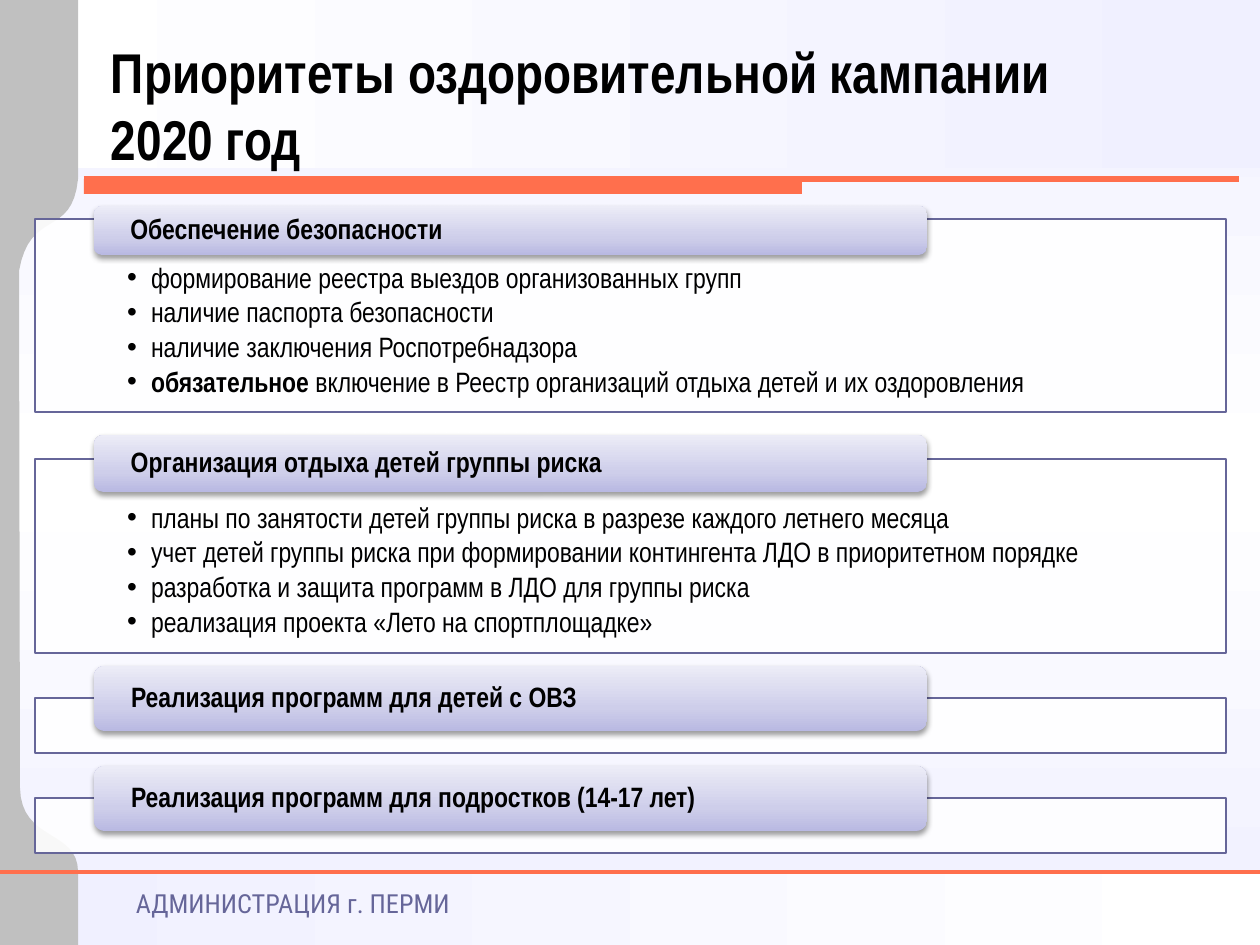
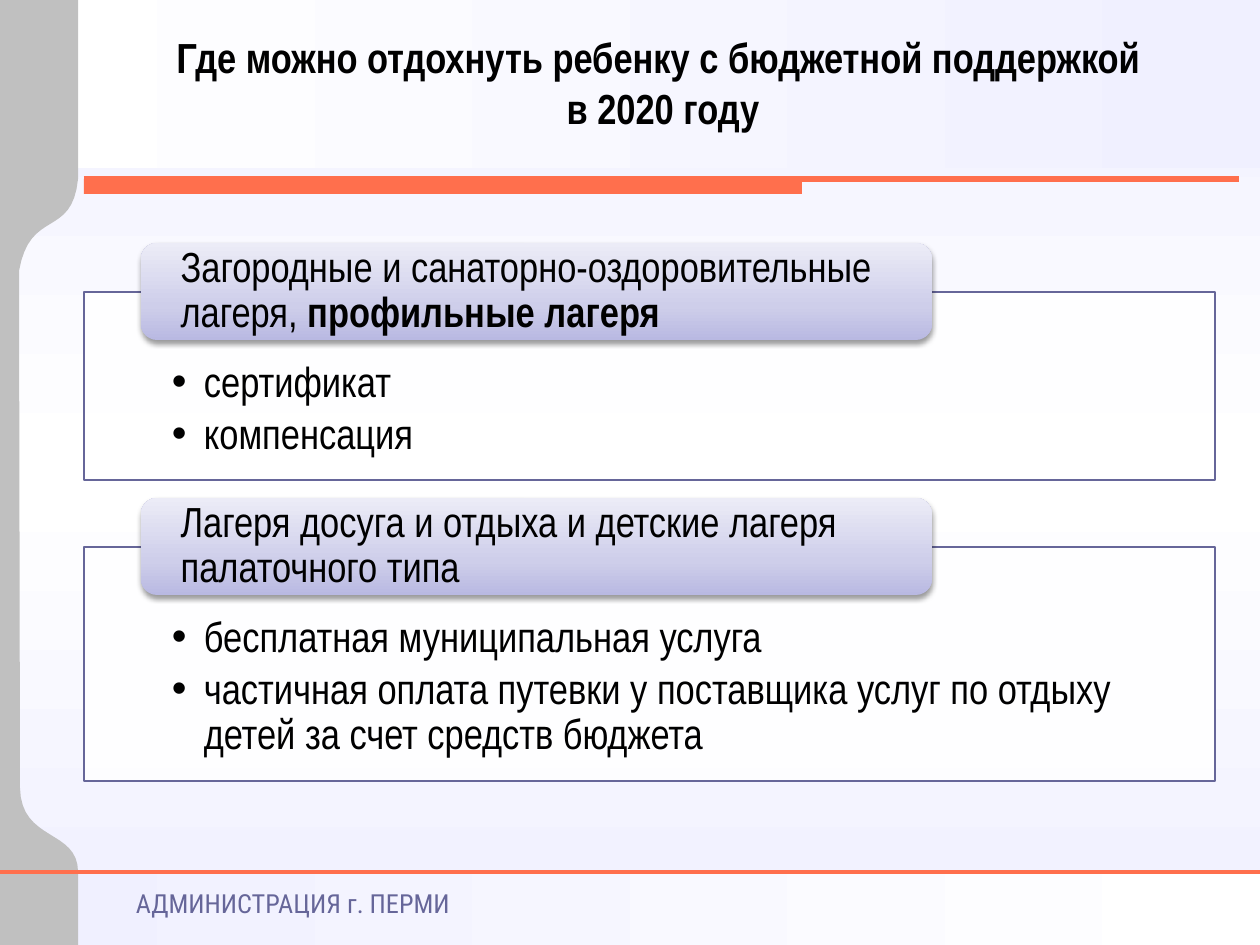
from dataclasses import dataclass

from lxml import etree
from pptx import Presentation
from pptx import util as u
from pptx.dml import color
from pptx.enum import shapes, text
from pptx.oxml import ns

SCALE = 914400 / 126


@dataclass(frozen=True)
class Theme:
    pale: str = "F0F0FF"
    white: str = "FFFFFF"
    grey: str = "C0C0C0"
    orange: str = "FF6F4D"
    slate: str = "666699"
    black: str = "000000"
    bar_stops: tuple = ((0, "B9B9E2"), (35, "CECEEA"), (100, "ECECF7"))
    page_stops: tuple = ((0, "F0F0FF"), (50, "FFFFFF"), (100, "F0F0FF"))
    font: str = "Arial Narrow"
    footer_font: str = "Roboto Condensed"
    footer_size: int = 15
    title_size: int = 32
    subtitle_size: int = 24


@dataclass(frozen=True)
class SectionStyle:
    size: int
    insets: tuple
    hanging: int
    bar_offset: int
    bar_width: int
    bar_inset: int


THEME = Theme()
COMPACT = SectionStyle(16, (92, 45, 92, 15), 24, 59, 833, 34)
LARGE = SectionStyle(24, (88, 69, 88, 24), 32, 57, 791, 35)


def px(value):
    return u.Emu(round(value * SCALE))


def rgb(code):
    return color.RGBColor.from_string(code)


def add_xml(parent, tag, **attributes):
    return etree.SubElement(parent, ns.qn(tag), attributes)


def set_gradient(fill, holder, stops, angle):
    fill.gradient()
    fill.gradient_angle = angle
    stop_list = holder.find(".//" + ns.qn("a:gsLst"))
    for stop in list(stop_list):
        stop_list.remove(stop)
    for position, code in stops:
        stop = add_xml(stop_list, "a:gs", pos=str(position * 1000))
        add_xml(stop, "a:srgbClr", val=code)


def add_block(page, box, fill=None, kind=shapes.MSO_SHAPE.RECTANGLE):
    block = page.shapes.add_shape(kind, *map(px, box))
    block.shadow.inherit = False
    block.line.fill.background()
    if fill:
        block.fill.solid()
        block.fill.fore_color.rgb = rgb(fill)
    return block


def add_rule(page, start, end, width):
    rule = page.shapes.add_connector(
        shapes.MSO_CONNECTOR.STRAIGHT, *map(px, start + end))
    rule.line.color.rgb = rgb(THEME.orange)
    rule.line.width = u.Pt(width)
    add_xml(rule._element.spPr, "a:effectLst")


def set_frame(frame, insets, anchor, wrap=True):
    frame.word_wrap = wrap
    frame.vertical_anchor = anchor
    (frame.margin_left, frame.margin_top,
     frame.margin_right, frame.margin_bottom) = map(px, insets)


def write(para, wording, size, bold=False, font=THEME.font, code=THEME.black):
    for index, part in enumerate(wording.split("*")):
        if part:
            span = para.add_run()
            span.text = part
            span.font.name = font
            span.font.size = u.Pt(size)
            span.font.bold = bold or index % 2 == 1
            span.font.color.rgb = rgb(code)


def add_text(page, box, insets, anchor, lines, size, align=text.PP_ALIGN.LEFT,
             wrap=True, **look):
    frame = page.shapes.add_textbox(*map(px, box)).text_frame
    set_frame(frame, insets, anchor, wrap)
    for index, line in enumerate(lines):
        para = frame.add_paragraph() if index else frame.paragraphs[0]
        para.alignment = align
        write(para, line, size, **look)


def curve(start, first, second, end, steps=16):
    for step in range(1, steps + 1):
        t = step / steps
        weights = ((1 - t) ** 3, 3 * t * (1 - t) ** 2, 3 * t * t * (1 - t), t ** 3)
        yield tuple(sum(w * p[axis] for w, p in zip(weights, (start, first, second, end)))
                    for axis in (0, 1))


def add_side_band(page):
    points = [(78, 0), (-1, 0), (-1, 945), (78, 945), (78, 872)]
    points += curve((78, 872), (78, 829), (21, 842), (20, 788))
    points.append((19, 271))
    points += curve((19, 271), (30, 208), (72, 239), (78, 179))
    builder = page.shapes.build_freeform(*map(px, (78, 179)), scale=1.0)
    builder.add_line_segments([tuple(map(px, point)) for point in points], close=True)
    band = builder.convert_to_shape()
    band.shadow.inherit = False
    band.line.fill.background()
    band.fill.solid()
    band.fill.fore_color.rgb = rgb(THEME.grey)


def add_page(deck):
    page = deck.slides.add_slide(deck.slide_layouts[6])
    set_gradient(page.background.fill, page._element, THEME.page_stops, 90)
    bands = (((0, 0, 1260, 168), (THEME.white, THEME.pale)),
             ((0, 872, 1260, 73), (THEME.pale, THEME.white)))
    for box, codes in bands:
        band = add_block(page, box)
        set_gradient(band.fill, band._element, tuple(zip((0, 100), codes)), 0)
    add_side_band(page)
    add_block(page, (84, 179, 718, 15), THEME.orange)
    add_rule(page, (84, 179), (1239, 179), 3)
    add_rule(page, (0, 872), (1260, 872), 2.25)
    add_text(page, (136, 881, 441, 44), (0, 6, 0, 6), text.MSO_ANCHOR.TOP,
             ["АДМИНИСТРАЦИЯ г. ПЕРМИ"], THEME.footer_size,
             font=THEME.footer_font, code=THEME.slate)
    return page


def add_section(page, box, rise, bar_height, heading, items, style):
    left, top = box[:2]
    panel = add_block(page, box, THEME.white)
    white = panel._element.spPr.find(ns.qn("a:solidFill"))[0]
    add_xml(white, "a:alpha", val="90000")
    panel.line.color.rgb = rgb(THEME.slate)
    panel.line.width = u.Pt(0.75)
    set_frame(panel.text_frame, style.insets, text.MSO_ANCHOR.TOP)
    for index, item in enumerate(items):
        frame = panel.text_frame
        para = frame.add_paragraph() if index else frame.paragraphs[0]
        properties = para._p.get_or_add_pPr()
        properties.set("marL", str(px(style.hanging)))
        properties.set("indent", str(-px(style.hanging)))
        add_xml(properties, "a:buFont", typeface="Arial")
        add_xml(properties, "a:buChar", char="•")
        para.alignment = text.PP_ALIGN.LEFT
        para.line_spacing = 0.9
        para.space_after = u.Pt(style.size * 0.16)
        write(para, item, style.size)

    bar = add_block(page, (left + style.bar_offset, top - rise, style.bar_width, bar_height),
                    kind=shapes.MSO_SHAPE.ROUNDED_RECTANGLE)
    set_gradient(bar.fill, bar._element, THEME.bar_stops, 90)
    effects = bar._element.spPr.find(ns.qn("a:effectLst"))
    shadow = add_xml(effects, "a:outerShdw", blurRad=str(u.Pt(3.1)), dist=str(u.Pt(1.6)),
                     dir="5400000", rotWithShape="0")
    add_xml(add_xml(shadow, "a:srgbClr", val=THEME.black), "a:alpha", val="38000")
    set_frame(bar.text_frame, (style.bar_inset, 0, style.bar_inset, 0), text.MSO_ANCHOR.MIDDLE)
    para = bar.text_frame.paragraphs[0]
    para.alignment = text.PP_ALIGN.LEFT
    para.line_spacing = 0.9
    write(para, heading, style.size)


def add_priorities(deck):
    page = add_page(deck)
    add_text(page, (98, 49, 1071, 129), (13, 6, 13, 6), text.MSO_ANCHOR.BOTTOM,
             ["Приоритеты оздоровительной кампании 2020 год"], THEME.title_size, bold=True)
    sections = (
        (219, 193, 13, 49, "*Обеспечение безопасности*", (
            "формирование реестра выездов организованных групп",
            "наличие паспорта безопасности",
            "наличие заключения Роспотребнадзора",
            "*обязательное* включение в Реестр организаций отдыха детей и их оздоровления")),
        (459, 194, 24, 57, "*Организация отдыха детей группы риска*", (
            "планы по занятости детей группы риска в разрезе каждого летнего месяца",
            "учет детей группы риска при формировании контингента ЛДО в приоритетном порядке",
            "разработка и защита программ в ЛДО для группы риска",
            "реализация проекта «Лето на спортплощадке»")),
        (698, 55, 32, 65, "*Реализация программ для детей с ОВЗ*", ()),
        (798, 55, 32, 65, "*Реализация программ для подростков (14-17 лет)*", ()),
    )
    for top, height, *content in sections:
        add_section(page, (35, top, 1191, height), *content, COMPACT)


def add_places(deck):
    page = add_page(deck)
    add_text(page, (154, 26, 1018, 115), (13, 6, 13, 6), text.MSO_ANCHOR.TOP,
             ["Где можно отдохнуть ребенку с бюджетной поддержкой ", "в 2020 году"],
             THEME.subtitle_size, text.PP_ALIGN.CENTER, wrap=False, bold=True)
    sections = (
        (292, 188, "Загородные и санаторно-оздоровительные лагеря, *профильные лагеря*",
         ("сертификат", "компенсация")),
        (547, 234, "Лагеря досуга и отдыха и детские лагеря палаточного типа",
         ("бесплатная муниципальная услуга",
          "частичная оплата путевки у поставщика услуг по отдыху детей за счет средств бюджета")),
    )
    for top, height, *content in sections:
        add_section(page, (84, top, 1131, height), 49, 97, *content, LARGE)


def main():
    deck = Presentation()
    deck.slide_width, deck.slide_height = px(1260), px(945)
    add_priorities(deck)
    add_places(deck)
    deck.save("out.pptx")


if __name__ == "__main__":
    main()
